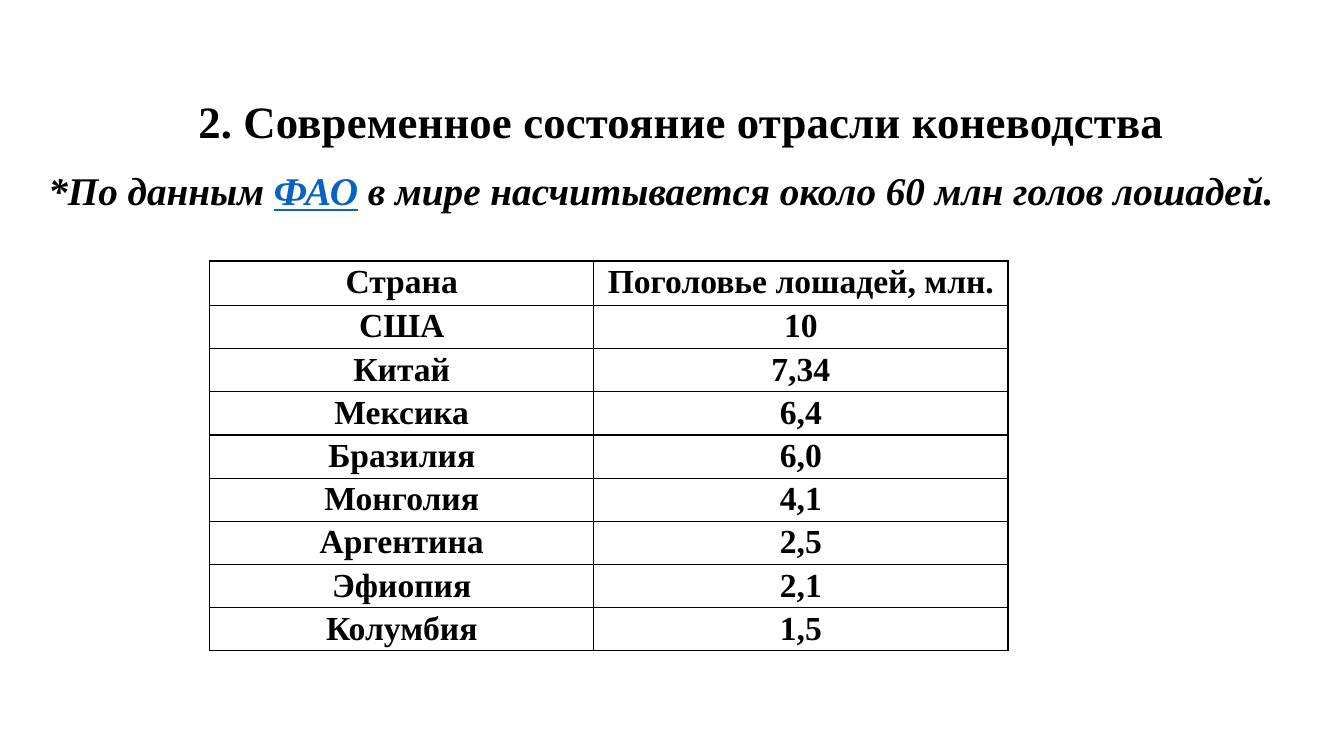
import pptx
import pptx.util
import pptx.dml.color
import pptx.enum.text
from lxml import etree

Pt = pptx.util.Pt
CENTER = pptx.enum.text.PP_ALIGN.CENTER

# Content
HEADING = "2. Современное состояние отрасли коневодства"
NOTE = [("*По данным ", "text"), ("ФАО", "link"),
        (" в мире насчитывается около 60 млн голов лошадей.", "text")]
HERDS = [
    ("Страна", "Поголовье лошадей, млн."),
    ("США", "10"),
    ("Китай", "7,34"),
    ("Мексика", "6,4"),
    ("Бразилия", "6,0"),
    ("Монголия", "4,1"),
    ("Аргентина", "2,5"),
    ("Эфиопия", "2,1"),
    ("Колумбия", "1,5"),
]

# Theme and layout, in points
THEME = {"font": "Times New Roman", "text": "000000", "link": "0563C1",
         "border": "000000", "heading": 32, "note": 28, "cell": 24}
SLIDE_SIZE = (960, 540)
HEADING_BOX = (-7.2, 43.9, 952.6, 65.5)
NOTE_BOX = (27.4, 115.2, 910.8, 41)
TABLE_CORNER = (149.8, 186.5)
COLUMNS = (274.3, 295.9)
HEADER_ROW, COUNTRY_ROW = 31.7, 30.85
CELL_FORMAT = {"margin_left": Pt(5), "margin_right": Pt(5),
               "margin_top": 0, "margin_bottom": 0}


def add_text(paragraph, text, size, color="text", **extra):
    run = paragraph.add_run()
    run.text = text
    look = {"name": THEME["font"], "size": Pt(THEME[size]), "bold": True, **extra}
    for key, value in look.items():
        setattr(run.font, key, value)
    run.font.color.rgb = pptx.dml.color.RGBColor.from_string(THEME[color])
    return run


def add_box(slide, box):
    frame = slide.shapes.add_textbox(*map(Pt, box)).text_frame
    frame.word_wrap = True
    frame.auto_size = pptx.enum.text.MSO_AUTO_SIZE.SHAPE_TO_FIT_TEXT
    return frame.paragraphs[0]


def add_borders(cell):
    ns = "http://schemas.openxmlformats.org/drawingml/2006/main"
    properties = cell._tc.get_or_add_tcPr()
    for position, side in enumerate(("lnL", "lnR", "lnT", "lnB")):
        line = etree.Element(f"{{{ns}}}{side}", w=str(Pt(1)))
        fill = etree.SubElement(line, f"{{{ns}}}solidFill")
        etree.SubElement(fill, f"{{{ns}}}srgbClr", val=THEME["border"])
        properties.insert(position, line)


def main():
    deck = pptx.Presentation()
    deck.slide_width, deck.slide_height = map(Pt, SLIDE_SIZE)
    slide = deck.slides.add_slide(deck.slide_layouts[6])

    # Heading, with first-line indent and slight letter spacing
    heading = add_box(slide, HEADING_BOX)
    heading.alignment = CENTER
    heading.line_spacing = 1.5
    heading._p.get_or_add_pPr().set("indent", str(Pt(35.3)))
    run = add_text(heading, HEADING, "heading")
    run._r.get_or_add_rPr().set("spc", "10")

    # Note
    note = add_box(slide, NOTE_BOX)
    for text, color in NOTE:
        add_text(note, text, "note", color, italic=True, underline=color == "link")

    # Table of herds by country
    heights = [HEADER_ROW] + [COUNTRY_ROW] * (len(HERDS) - 1)
    herds = slide.shapes.add_table(
        len(HERDS), len(COLUMNS), *map(Pt, TABLE_CORNER),
        Pt(sum(COLUMNS)), Pt(sum(heights))).table
    herds.first_row = herds.horz_banding = False
    for column, width in zip(herds.columns, COLUMNS):
        column.width = Pt(width)
    for row, height, values in zip(herds.rows, heights, HERDS):
        row.height = Pt(height)
        for cell, value in zip(row.cells, values):
            for key, setting in CELL_FORMAT.items():
                setattr(cell, key, setting)
            cell.fill.background()
            add_borders(cell)
            paragraph = cell.text_frame.paragraphs[0]
            paragraph.alignment = CENTER
            paragraph.line_spacing = 1.07
            add_text(paragraph, value, "cell")

    deck.save("out.pptx")


if __name__ == "__main__":
    main()
